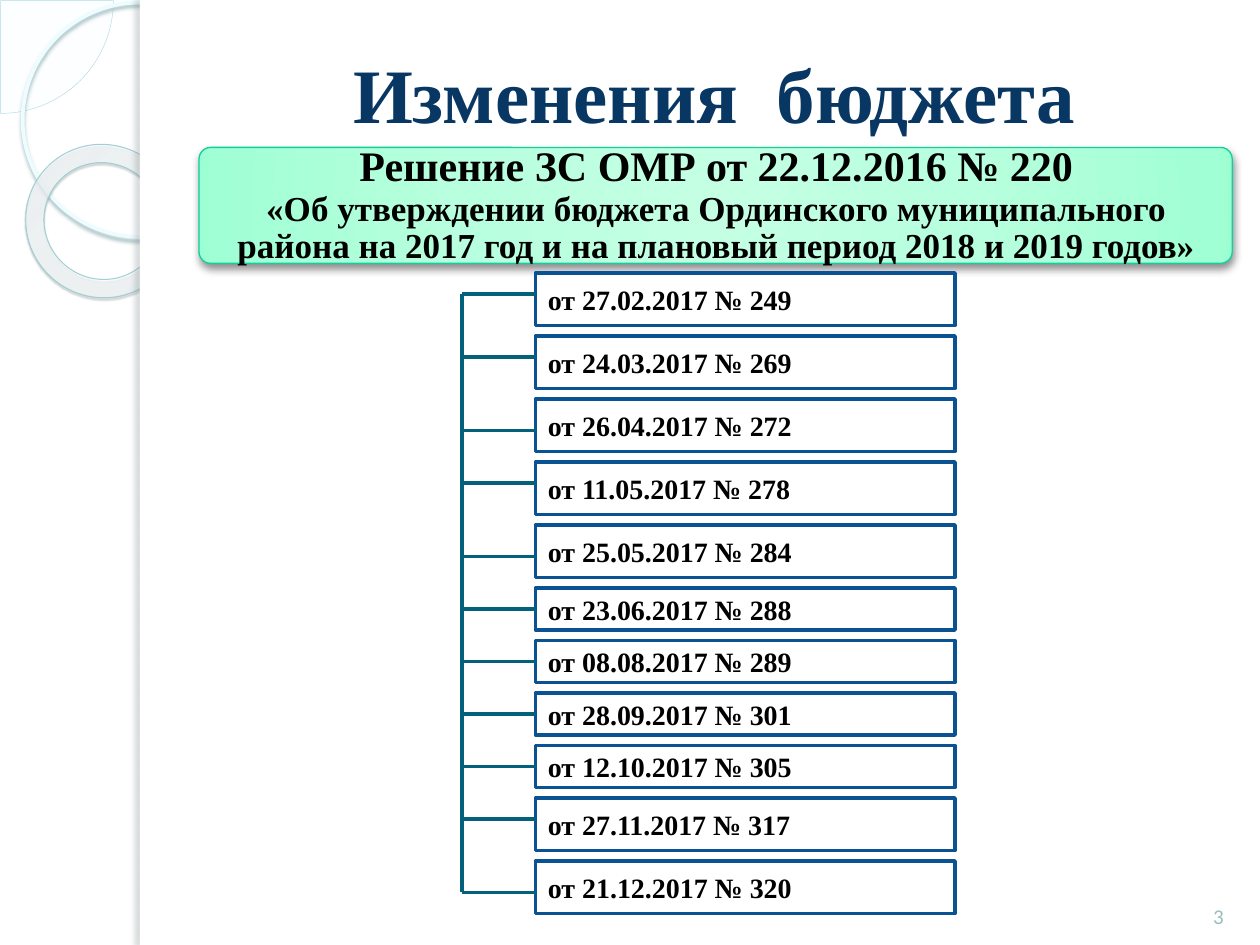
from dataclasses import dataclass

from lxml import etree
from pptx import Presentation
from pptx.dml.color import RGBColor
from pptx.enum.shapes import MSO_CONNECTOR, MSO_SHAPE
from pptx.enum.text import MSO_ANCHOR, PP_ALIGN
from pptx.oxml.ns import qn
from pptx.util import Inches, Pt

LEFT, CENTER = PP_ALIGN.LEFT, PP_ALIGN.CENTER
MIDDLE, BOTTOM = MSO_ANCHOR.MIDDLE, MSO_ANCHOR.BOTTOM
STRAIGHT = MSO_CONNECTOR.STRAIGHT


@dataclass(frozen=True)
class Theme:
    serif: str = "Times New Roman"
    sans: str = "Calibri"
    title_size: int = 44
    decision_size: int = 24
    subject_size: int = 20
    amendment_size: int = 16
    number_size: int = 12
    white: str = "FFFFFF"
    black: str = "000000"
    title: str = "083763"
    number: str = "97BDC3"
    box_line: str = "0B5292"
    branch: str = "04617B"
    banner_line: str = "10CF9B"
    banner_stops: tuple = ((0, "C4FFE4", 100), (50, "B7FFDE", 100),
                           (97, "A0FFD4", 100), (100, "99FFD2", 100))
    pie: str = "F8FEFF"
    pie_line: str = "AFDBE2"
    circle_line: str = "EDFCFF"
    circle_shadow: str = "9CB9BE"
    ring_stops: tuple = ((0, "F9FEFF", 70), (70, "FDFFFF", 55), (100, "9EF2FF", 60))
    ring_line: str = "A1CFD6"
    ring_shadow: str = "4B5E61"
    edge_shadow: str = "6C7A7C"


THEME = Theme()


def add_shape(kind, box, fill=None, alpha=100, stops=(), focus=(50, 50, 50, 50),
              line=None, width=1, shadow=None):
    """Add a preset shape; stops are (percent, colour, opacity) of a radial
    gradient, shadow is (colour, opacity, blur, distance, angle)."""
    shape = slide.shapes.add_shape(kind, *map(Inches, box))
    shape.shadow.inherit = False
    properties = shape.element.spPr
    if fill or stops:
        shape.fill.solid()
        shape.fill.fore_color.rgb = RGBColor.from_string(fill or THEME.white)
        solid = properties.find(qn("a:solidFill"))
        etree.SubElement(solid[0], qn("a:alpha"), val=str(alpha * 1000))
    else:
        shape.fill.background()
    if stops:
        gradient = etree.Element(qn("a:gradFill"), rotWithShape="1")
        stop_list = etree.SubElement(gradient, qn("a:gsLst"))
        for position, color, opacity in stops:
            stop = etree.SubElement(stop_list, qn("a:gs"), pos=str(position * 1000))
            tint = etree.SubElement(stop, qn("a:srgbClr"), val=color)
            etree.SubElement(tint, qn("a:alpha"), val=str(opacity * 1000))
        radial = etree.SubElement(gradient, qn("a:path"), path="circle")
        etree.SubElement(radial, qn("a:fillToRect"),
                         {side: str(value * 1000) for side, value in zip("ltrb", focus)})
        properties.replace(solid, gradient)
    if line:
        shape.line.color.rgb = RGBColor.from_string(line)
        shape.line.width = Pt(width)
    else:
        shape.line.fill.background()
    if shadow:
        color, opacity, blur, distance, angle = shadow
        outer = etree.SubElement(properties.find(qn("a:effectLst")), qn("a:outerShdw"),
                                 blurRad=str(Pt(blur)), dist=str(Pt(distance)),
                                 dir=str(angle * 60000), algn="ctr", rotWithShape="0")
        tint = etree.SubElement(outer, qn("a:srgbClr"), val=color)
        etree.SubElement(tint, qn("a:alpha"), val=str(opacity * 1000))
    return shape


def write_text(holder, *lines, font=THEME.serif, color=THEME.black, bold=True,
               align=CENTER, anchor=MIDDLE, spacing=None):
    """Fill a shape with paragraphs given as (text, size) pairs."""
    frame = holder.text_frame
    frame.word_wrap = True
    frame.vertical_anchor = anchor
    for index, (text, size) in enumerate(lines):
        paragraph = frame.add_paragraph() if index else frame.paragraphs[0]
        paragraph.alignment = align
        paragraph.line_spacing = spacing
        run = paragraph.add_run()
        run.text = text
        run.font.name = font
        run.font.size = Pt(size)
        run.font.bold = bold
        run.font.color.rgb = RGBColor.from_string(color)


prs = Presentation()
prs.slide_width, prs.slide_height = Inches(10), Inches(7.5)
slide = prs.slides.add_slide(prs.slide_layouts[5])

# Decorated left margin
corner = add_shape(MSO_SHAPE.PIE, (-0.89, -0.89, 1.79, 1.79), fill=THEME.pie, alpha=33,
                   line=THEME.pie_line, width=0.25)
corner.adjustments[0] = 0
corner.adjustments[1] = 54
add_shape(MSO_SHAPE.OVAL, (0.18, 0.02, 1.86, 1.86), line=THEME.circle_line, width=2.15,
          shadow=(THEME.circle_shadow, 85, 2, 2, 90))
ring = add_shape(MSO_SHAPE.DONUT, (0.2, 1.15, 1.23, 1.21), stops=THEME.ring_stops,
                 focus=(-408, -50, 508, 150), line=THEME.ring_line, width=0.58,
                 shadow=(THEME.ring_shadow, 35, 1, 1.2, 75))
ring.adjustments[0] = 0.12
ring.rotation = 38.6
add_shape(MSO_SHAPE.RECTANGLE, (1.11, 0, 8.89, 7.5), fill=THEME.white)
add_shape(MSO_SHAPE.RECTANGLE, (1.11, 0, 0.08, 7.5), fill=THEME.white,
          shadow=(THEME.edge_shadow, 25, 3, 3, 180))

# Title, raised above the white page panel
title = slide.shapes.title
title.left, title.top, title.width, title.height = map(Inches, (1.57, 0.3, 8.2, 0.87))
write_text(title, ("Изменения  бюджета", THEME.title_size), color=THEME.title)
slide.shapes.element.append(title.element)

page_number = slide.shapes.add_textbox(*map(Inches, (9.42, 6.9, 0.5, 0.52)))
write_text(page_number, ("3", THEME.number_size), font=THEME.sans, color=THEME.number,
           bold=False, anchor=BOTTOM)

# Original decision
banner = add_shape(MSO_SHAPE.ROUNDED_RECTANGLE, (1.58, 1.17, 8.2, 0.92),
                   stops=THEME.banner_stops, line=THEME.banner_line, width=0.75,
                   shadow=(THEME.black, 43, 5, 2, 90))
banner.adjustments[0] = 0.1
decision = slide.shapes.add_textbox(*map(Inches, (1.62, 1.19, 8.13, 0.89)))
frame = decision.text_frame
frame.margin_left = frame.margin_right = Inches(0.05)
frame.margin_top = frame.margin_bottom = Inches(0.03)
write_text(decision,
           ("Решение ЗС ОМР от 22.12.2016 № 220", THEME.decision_size),
           ("«Об утверждении бюджета Ординского муниципального района на 2017 год "
            "и на плановый период 2018 и 2019 годов»", THEME.subject_size),
           spacing=0.9)

# Amendments: text, box height and branch offset, in grid units of 1/12 inch
UNIT = 1 / 12
GAP = 1
SPINE_X, BOX_X, BOX_WIDTH = 3.67, 4.25, 3.33
amendments = [
    ("от 27.02.2017 № 249", 5, 2),
    ("от 24.03.2017 № 269", 5, 2),
    ("от 26.04.2017 № 272", 5, 3),
    ("от 11.05.2017 № 278", 5, 2),
    ("от 25.05.2017 № 284", 5, 3),
    ("от 23.06.2017 № 288", 4, 2),
    ("от 08.08.2017 № 289", 4, 2),
    ("от 28.09.2017 № 301", 4, 2),
    ("от 12.10.2017 № 305", 4, 2),
    ("от 27.11.2017 № 317", 5, 2),
    ("от 21.12.2017 № 320", 5, 3),
]
top = 26
branch_levels = []
for amendment, height, offset in amendments:
    box = add_shape(MSO_SHAPE.RECTANGLE, (BOX_X, top * UNIT, BOX_WIDTH, height * UNIT),
                    fill=THEME.white, line=THEME.box_line, width=2)
    write_text(box, (amendment, THEME.amendment_size), align=LEFT)
    branch_levels.append((top + offset) * UNIT)
    top += height + GAP

spine = (SPINE_X, branch_levels[0], SPINE_X, branch_levels[-1])
branches = [(SPINE_X, level, BOX_X, level) for level in branch_levels]
for ends in [spine, *branches]:
    link = slide.shapes.add_connector(STRAIGHT, *map(Inches, ends))
    link.line.color.rgb = RGBColor.from_string(THEME.branch)
    link.line.width = Pt(2.25)
    etree.SubElement(link.element.spPr, qn("a:effectLst"))

prs.save("out.pptx")
